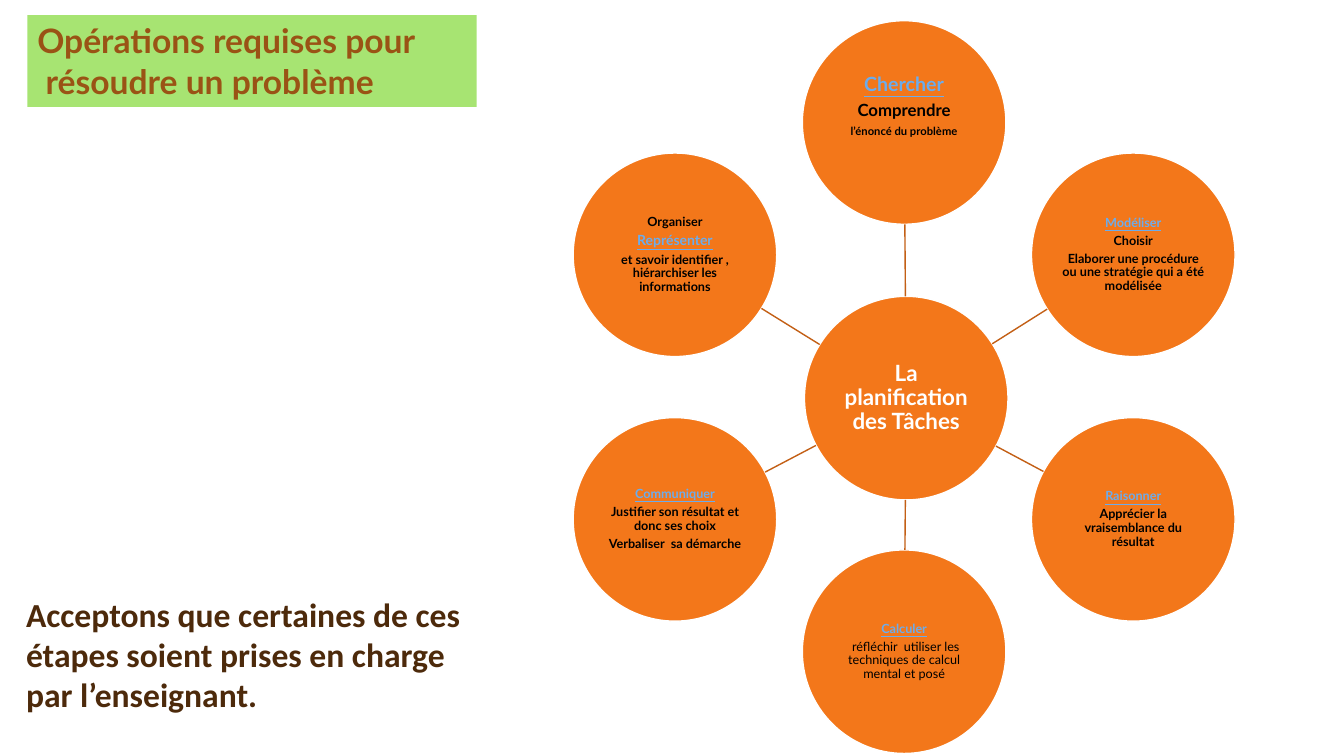
"""Slide on the operations needed to solve a problem: a hub and six linked circles."""
from math import cos, hypot, radians, sin

from lxml import etree
from pptx import Presentation
from pptx.dml.color import RGBColor
from pptx.enum.shapes import MSO_CONNECTOR, MSO_SHAPE
from pptx.enum.text import MSO_ANCHOR, MSO_AUTO_SIZE, PP_ALIGN
from pptx.oxml.ns import qn
from pptx.util import Pt

OVAL, STRAIGHT = MSO_SHAPE.OVAL, MSO_CONNECTOR.STRAIGHT
TOP, MIDDLE = MSO_ANCHOR.TOP, MSO_ANCHOR.MIDDLE
LEFT, CENTER = PP_ALIGN.LEFT, PP_ALIGN.CENTER
FIT, NO_FIT = MSO_AUTO_SIZE.SHAPE_TO_FIT_TEXT, MSO_AUTO_SIZE.NONE
COLORS = {
    "green": "A7E472", "brown": "9A5315", "dark": "4D2A0B", "orange": "F3771A",
    "link": "C35F15", "blue": "6CACEC", "black": "000000", "white": "FFFFFF",
}
RGB = {name: RGBColor.from_string(value) for name, value in COLORS.items()}


def write(sp, lines, font="Lato", align=LEFT, anchor=TOP, fit=FIT, spacing=1.0, after=0.0):
    """Fill a shape with lines given as (text, size, color, bold, underline)."""
    tf = sp.text_frame
    tf.word_wrap, tf.auto_size, tf.vertical_anchor = True, fit, anchor
    for i, (text, size, color, bold, underline) in enumerate(lines):
        p = tf.paragraphs[0] if i == 0 else tf.add_paragraph()
        p.alignment, p.line_spacing = align, spacing
        p.space_before, p.space_after = Pt(0), Pt(size * after)
        r = p.add_run()
        r.text = text
        r.font.name, r.font.size = font, Pt(size)
        r.font.bold, r.font.underline = bold, underline
        r.font.color.rgb = RGB[color]


prs = Presentation()
prs.slide_width, prs.slide_height = Pt(960), Pt(540)
s = prs.slides.add_slide(prs.slide_layouts[5])

title = s.shapes.title
title.left, title.top, title.width, title.height = Pt(19.5), Pt(10.8), Pt(321), Pt(65.5)
title.fill.solid()
title.fill.fore_color.rgb = RGB["green"]
write(title, [(text, 24, "brown", True, False)
              for text in ("Opérations requises pour", " résoudre un problème")])

note = s.shapes.add_textbox(Pt(11.5), Pt(420.5), Pt(937.5), Pt(94.3))
write(note, [(text, 24, "dark", True, False)
             for text in ("Acceptons que certaines de ces", "étapes soient prises en charge",
                          "par l’enseignant.")], font="Calibri")

RADIUS = 72.7
HUB_X, HUB_Y = 647.3, 284.4
RING_X, RING_Y, RING_RADIUS = 645.8, 276.5, 189

steps = [
    [("Chercher", 14, "blue", True, True), ("Comprendre", 12, "black", True, False),
     ("l’énoncé du problème", 8, "black", True, False)],
    [("Modéliser", 9, "blue", True, True), ("Choisir", 9, "black", True, False),
     ("Elaborer une procédure ou une stratégie qui a été modélisée", 9, "black", True, False)],
    [("Raisonner", 9, "blue", True, True),
     ("Apprécier la vraisemblance du résultat", 9, "black", True, False)],
    [("Calculer", 9, "blue", True, True),
     (" réfléchir  utiliser les techniques de calcul mental et posé", 9, "black", False, False)],
    [("Communiquer", 9, "blue", True, True),
     ("Justifier son résultat et donc ses choix", 9, "black", True, False),
     ("Verbaliser  sa démarche", 9, "black", True, False)],
    [("Organiser", 9, "black", True, False), ("Représenter", 10, "blue", True, True),
     ("et savoir identifier , hiérarchiser les informations", 9, "black", True, False)],
]
circles = [(HUB_X, HUB_Y, [("La planification des Tâches", 16, "white", True, False)])]
for i, lines in enumerate(steps):
    angle = radians(60 * i - 90)
    circles.append((RING_X + RING_RADIUS * cos(angle), RING_Y + RING_RADIUS * sin(angle), lines))

for x, y, lines in circles:
    sp = s.shapes.add_shape(OVAL, Pt(x - RADIUS), Pt(y - RADIUS), Pt(2 * RADIUS), Pt(2 * RADIUS))
    sp.shadow.inherit = False
    sp.fill.solid()
    sp.fill.fore_color.rgb = RGB["orange"]
    sp.line.color.rgb = RGB["white"]
    sp.line.width = Pt(1)
    tf = sp.text_frame
    tf.margin_left = tf.margin_right = tf.margin_top = Pt(0.7)
    tf.margin_bottom = Pt(24 if lines is steps[0] else 0.7)
    write(sp, lines, align=CENTER, anchor=MIDDLE, fit=NO_FIT, spacing=0.9, after=0.35)

for x, y, lines in circles[1:]:
    length = hypot(x - HUB_X, y - HUB_Y)
    dx, dy = RADIUS * (x - HUB_X) / length, RADIUS * (y - HUB_Y) / length
    link = s.shapes.add_connector(STRAIGHT, Pt(HUB_X + dx), Pt(HUB_Y + dy), Pt(x - dx), Pt(y - dy))
    link.line.color.rgb = RGB["link"]
    link.line.width = Pt(1)
    etree.SubElement(link._element.spPr, qn("a:effectLst"))

prs.save("out.pptx")
